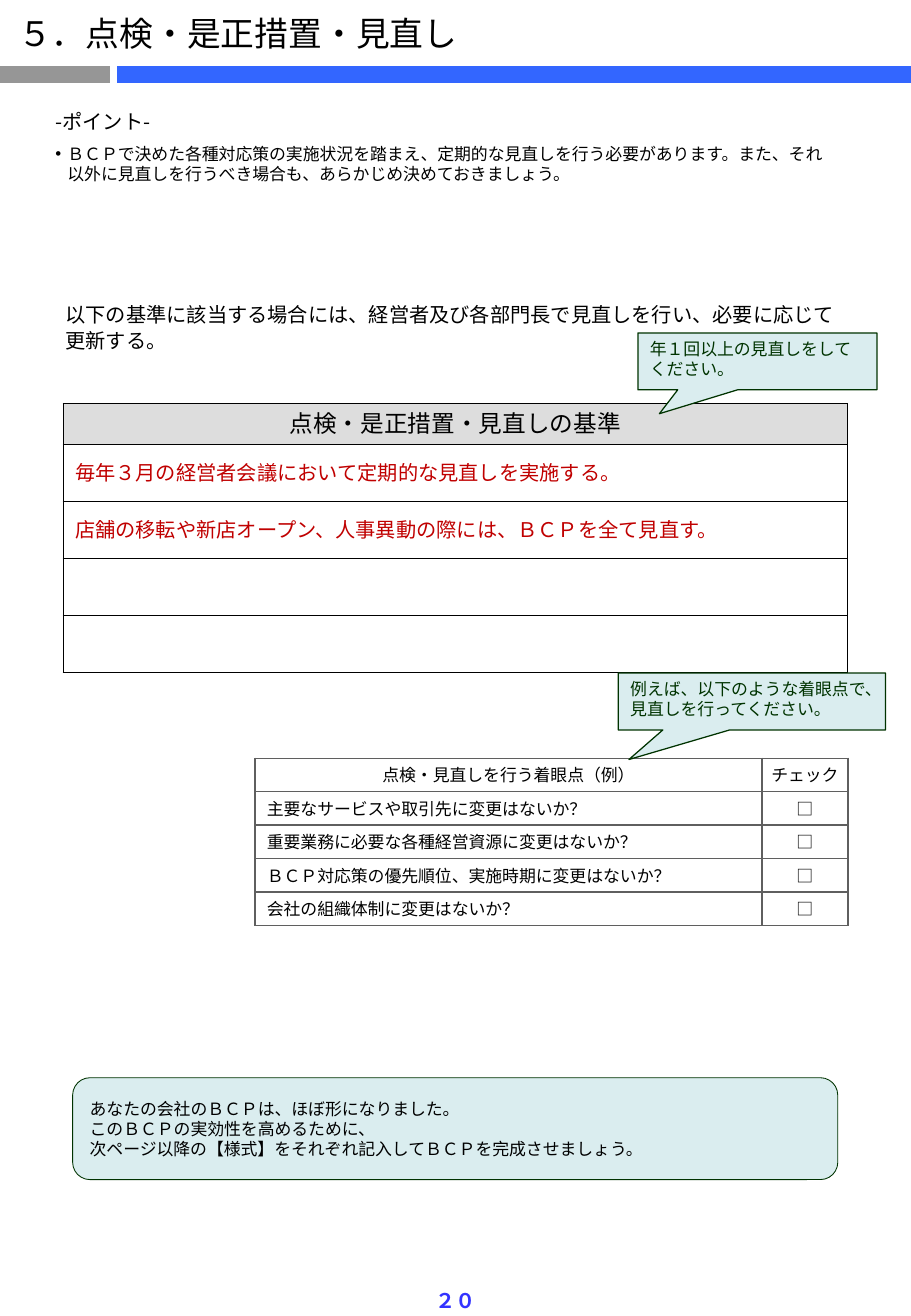
from copy import deepcopy
from dataclasses import dataclass

from lxml.etree import SubElement
from pptx import Presentation
from pptx.dml.color import RGBColor
from pptx.enum.shapes import MSO_CONNECTOR, MSO_SHAPE
from pptx.enum.text import MSO_ANCHOR, MSO_AUTO_SIZE, PP_ALIGN
from pptx.oxml.ns import qn
from pptx.util import Cm, Pt


@dataclass(frozen=True)
class Theme:
    font: str = "Noto Sans CJK JP"
    accent_font: str = "Arial"
    black: str = "000000"
    grey_bar: str = "969696"
    blue_bar: str = "3366FF"
    page_blue: str = "3333FF"
    answer_red: str = "C00000"
    header_fill: str = "DDDDDD"
    grid_grey: str = "5F5F5F"
    note_fill: str = "DAEDEF"
    note_green: str = "003300"
    title_size: int = 20
    heading_size: int = 14
    text_size: int = 12
    small_size: int = 10


@dataclass(frozen=True)
class Box:
    left: float
    top: float
    width: float
    height: float

    def lengths(self):
        return [Cm(value) for value in (self.left, self.top, self.width, self.height)]


THEME = Theme()
FRAME = {
    "word_wrap": True,
    "auto_size": MSO_AUTO_SIZE.NONE,
    "vertical_anchor": MSO_ANCHOR.TOP,
    "margin_left": Cm(0.25),
    "margin_right": Cm(0.25),
    "margin_top": Cm(0.13),
    "margin_bottom": Cm(0.13),
}
CELL = {
    "vertical_anchor": MSO_ANCHOR.MIDDLE,
    "margin_left": Cm(0.25),
    "margin_right": Cm(0.25),
    "margin_top": Cm(0.13),
    "margin_bottom": Cm(0.05),
}


def set_values(target, values):
    for name, value in values.items():
        setattr(target, name, value)


def write(paragraph, text, size, color=THEME.black, font=THEME.font, bold=False,
          line_factor=1.18, **layout):
    paragraph.text = text
    set_values(paragraph, {
        "alignment": PP_ALIGN.LEFT,
        "line_spacing": Pt(size * line_factor),
        "space_before": Pt(0),
        "space_after": Pt(0),
    } | layout)
    for run in paragraph.runs:
        set_values(run.font, {"size": Pt(size), "bold": bold, "name": font})
        run.font.color.rgb = RGBColor.from_string(color)
        properties = run._r.get_or_add_rPr()
        SubElement(properties, qn("a:ea")).set("typeface", THEME.font)
        for line_break in paragraph._p.findall(qn("a:br")):
            if not len(line_break):
                line_break.append(deepcopy(properties))


def write_frame(frame, texts, size, values=None, **style):
    set_values(frame, FRAME | (values or {}))
    for index, text in enumerate(texts):
        paragraph = frame.add_paragraph() if index else frame.paragraphs[0]
        write(paragraph, text, size, **style)


def place(shape, box):
    set_values(shape, dict(zip(("left", "top", "width", "height"), box.lengths())))


def add_header(slide, box, text):
    title = slide.shapes.title
    place(title, Box(box.left + 0.13, box.top + 0.15, 10.21, 1.09))
    write_frame(title.text_frame, [text], THEME.title_size)
    y = Cm(box.top + box.height)
    for start, end, color in (
        (0, 2.29, THEME.grey_bar),
        (2.45, box.width, THEME.blue_bar),
    ):
        bar = slide.shapes.add_connector(
            MSO_CONNECTOR.STRAIGHT, Cm(box.left + start), y, Cm(box.left + end), y)
        bar.line.width = Pt(10)
        bar.line.color.rgb = RGBColor.from_string(color)
        SubElement(bar._element.spPr, qn("a:effectLst"))


def add_points(slide, box, heading, point):
    body = slide.placeholders[1]
    place(body, box)
    frame = body.text_frame
    set_values(frame, FRAME)
    for paragraph, text, size, bullet in (
        (frame.paragraphs[0], heading, THEME.text_size, None),
        (frame.add_paragraph(), point, THEME.small_size, "•"),
    ):
        write(paragraph, text, size, space_after=Pt(6))
        properties = paragraph._p.get_or_add_pPr()
        properties.set("marL", str(Cm(0.25)))
        properties.set("indent", str(-Cm(0.25)))
        if bullet:
            SubElement(properties, qn("a:buChar")).set("char", bullet)
        else:
            SubElement(properties, qn("a:buNone"))


def add_text(slide, box, text, size, values=None, **style):
    text_box = slide.shapes.add_textbox(*box.lengths())
    write_frame(text_box.text_frame, [text], size, values, **style)


def border_cell(cell, color, width):
    properties = cell._tc.get_or_add_tcPr()
    for index, side in enumerate(("a:lnL", "a:lnR", "a:lnT", "a:lnB")):
        line = SubElement(properties, qn(side), w=str(Pt(width)))
        fill = SubElement(line, qn("a:solidFill"))
        SubElement(fill, qn("a:srgbClr")).set("val", color)
        properties.remove(line)
        properties.insert(index, line)


def add_grid(slide, box, widths, heights, border, border_width):
    table = slide.shapes.add_table(len(heights), len(widths), *box.lengths()).table
    set_values(table, {"first_row": False, "horz_banding": False})
    for column, width in zip(table.columns, widths):
        column.width = Cm(width)
    for row, height in zip(table.rows, heights):
        row.height = Cm(height)
    for cell in table.iter_cells():
        set_values(cell, CELL)
        cell.fill.background()
        border_cell(cell, border, border_width)
    return table


def add_criteria(slide, box, heading, criteria, blank_rows):
    count = len(criteria) + blank_rows
    header_height = 0.86
    row_height = (box.height - header_height) / count
    table = add_grid(slide, box, [box.width], [header_height] + [row_height] * count,
                     THEME.black, 0.5)
    header = table.cell(0, 0)
    header.fill.solid()
    header.fill.fore_color.rgb = RGBColor.from_string(THEME.header_fill)
    write(header.text_frame.paragraphs[0], heading, THEME.heading_size,
          alignment=PP_ALIGN.CENTER, space_before=Pt(2.8))
    for row, text in enumerate(criteria, 1):
        write(table.cell(row, 0).text_frame.paragraphs[0], text, THEME.text_size,
              THEME.answer_red, THEME.accent_font, space_before=Pt(2.4))


def add_checklist(slide, box, headings, questions):
    check_width = 1.8
    rows = [headings] + [(question, "□") for question in questions]
    table = add_grid(slide, box, [box.width - check_width, check_width],
                     [box.height / len(rows)] * len(rows), THEME.grid_grey, 1)
    for row, texts in enumerate(rows):
        for column, text in enumerate(texts):
            centred = row == 0 or column == 1
            write(table.cell(row, column).text_frame.paragraphs[0], text, THEME.small_size,
                  alignment=PP_ALIGN.CENTER if centred else PP_ALIGN.LEFT)
    set_values(table.cell(0, 1), {"margin_left": Cm(0.1), "margin_right": Cm(0.1)})


def add_note(slide, box, kind, adjustments, texts, line_width, values=None, **style):
    note = slide.shapes.add_shape(kind, *box.lengths())
    note.shadow.inherit = False
    note.fill.solid()
    note.fill.fore_color.rgb = RGBColor.from_string(THEME.note_fill)
    note.line.color.rgb = RGBColor.from_string(THEME.note_green)
    note.line.width = Pt(line_width)
    for index, value in enumerate(adjustments):
        note.adjustments[index] = value
    write_frame(note.text_frame, texts, THEME.small_size, values, **style)


def add_callout(slide, box, tip, text):
    add_note(slide, box, MSO_SHAPE.RECTANGULAR_CALLOUT, tip, [text], 0.75,
             color=THEME.note_green, space_before=Pt(1))


def add_review_slide(presentation, box):
    slide = presentation.slides.add_slide(presentation.slide_layouts[1])
    add_header(slide, Box(box.left, box.top, box.width, 1.55), "５．点検・是正措置・見直し")
    add_points(slide, Box(0.91, 2.16, 17.6, 1.83), "-ポイント-",
               "ＢＣＰで決めた各種対応策の実施状況を踏まえ、定期的な見直しを行う必要があります。また、それ\n"
               "以外に見直しを行うべき場合も、あらかじめ決めておきましょう。")
    add_criteria(slide, Box(1.32, 8.43, 16.4, 5.62), "点検・是正措置・見直しの基準",
                 ["毎年３月の経営者会議において定期的な見直しを実施する。",
                  "店舗の移転や新店オープン、人事異動の際には、ＢＣＰを全て見直す。"], 2)
    add_text(slide, Box(8.84, 26.8, 1.37, 0.79), "２０", THEME.text_size,
             {"word_wrap": False}, color=THEME.page_blue, bold=True, alignment=PP_ALIGN.CENTER)
    add_checklist(slide, Box(5.33, 15.85, 12.4, 3.5),
                  ("点検・見直しを行う着眼点（例）", "チェック"),
                  ["主要なサービスや取引先に変更はないか？",
                   "重要業務に必要な各種経営資源に変更はないか？",
                   "ＢＣＰ対応策の優先順位、実施時期に変更はないか？",
                   "会社の組織体制に変更はないか？"])
    add_text(slide, Box(1.12, 6.15, 17.04, 1.8),
             "以下の基準に該当する場合には、経営者及び各部門長で見直しを行い、必要に応じて\n更新する。",
             THEME.text_size, line_factor=1.28)
    add_callout(slide, Box(13.34, 6.96, 5, 1.19), (-0.41, 0.92),
                "年１回以上の見直しをしてください。")
    add_callout(slide, Box(12.93, 14.07, 5.59, 1.19), (-0.46, 1.02),
                "例えば、以下のような着眼点で、見直しを行ってください。")
    add_note(slide, Box(1.52, 22.53, 16, 2.13), MSO_SHAPE.ROUNDED_RECTANGLE, [0.17],
             ["あなたの会社のＢＣＰは、ほぼ形になりました。",
              "このＢＣＰの実効性を高めるために、\n"
              "次ページ以降の【様式】をそれぞれ記入してＢＣＰを完成させましょう。"],
             0.5, {"vertical_anchor": MSO_ANCHOR.MIDDLE})


def main():
    presentation = Presentation()
    page = Box(0, 0, 19.05, 27.51)
    set_values(presentation, {"slide_width": Cm(page.width), "slide_height": Cm(page.height)})
    add_review_slide(presentation, page)
    presentation.save("out.pptx")


if __name__ == "__main__":
    main()
